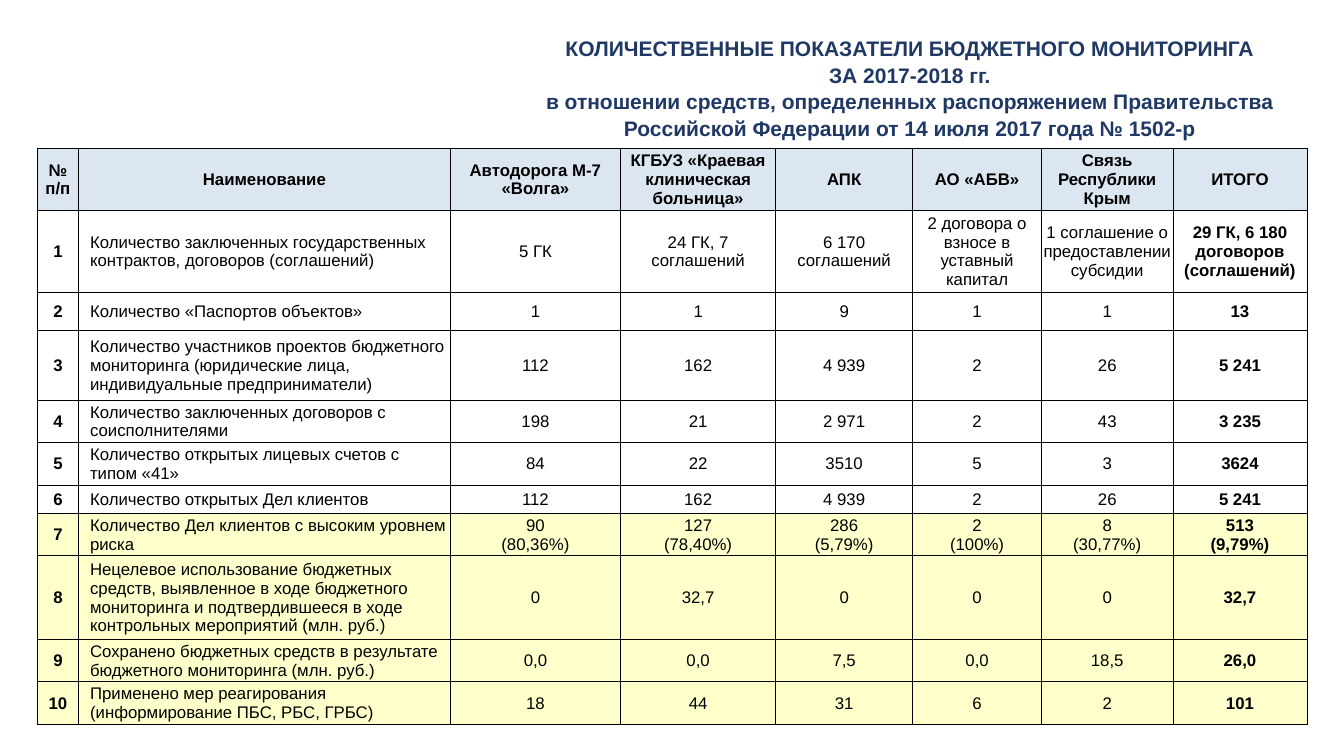
import pptx
import pptx.util
import pptx.dml.color
import pptx.enum.text
import pptx.oxml
import pptx.oxml.ns
from pptx.util import Cm, Pt

TITLE = [
    "КОЛИЧЕСТВЕННЫЕ ПОКАЗАТЕЛИ БЮДЖЕТНОГО МОНИТОРИНГА",
    "ЗА 2017-2018 гг.\vв отношении средств, определенных распоряжением Правительства "
    "Российской Федерации от 14 июля 2017 года № 1502-р",
]
HEADER = ("№ п/п", "Наименование", "Автодорога М-7 «Волга»",
          "КГБУЗ «Краевая клиническая больница»", "АПК", "АО «АБВ»",
          "Связь Республики Крым", "ИТОГО")
INDICATORS = [
    ("Количество заключенных государственных контрактов, договоров (соглашений)",
     "5 ГК", "24 ГК, 7 соглашений", "6 170 соглашений",
     "2 договора о взносе в уставный капитал",
     "1 соглашение о предоставлении субсидии",
     "29 ГК, 6 180 договоров (соглашений)"),
    ("Количество «Паспортов объектов»", "1", "1", "9", "1", "1", "13"),
    ("Количество участников проектов бюджетного мониторинга "
     "(юридические лица, индивидуальные предприниматели)",
     "112", "162", "4 939", "2", "26", "5 241"),
    ("Количество заключенных договоров с соисполнителями",
     "198", "21", "2 971", "2", "43", "3 235"),
    ("Количество открытых лицевых счетов с типом «41»",
     "84", "22", "3510", "5", "3", "3624"),
    ("Количество открытых Дел клиентов", "112", "162", "4 939", "2", "26", "5 241"),
    ("Количество Дел клиентов с высоким уровнем риска",
     "90\n(80,36%)", "127\n(78,40%)", "286\n(5,79%)", "2\n(100%)",
     "8\n(30,77%)", "513\n(9,79%)"),
    ("Нецелевое использование бюджетных средств, выявленное в ходе бюджетного "
     "мониторинга и подтвердившееся в ходе контрольных мероприятий (млн. руб.)",
     "0", "32,7", "0", "0", "0", "32,7"),
    ("Сохранено бюджетных средств в результате бюджетного мониторинга (млн. руб.)",
     "0,0", "0,0", "7,5", "0,0", "18,5", "26,0"),
    ("Применено мер реагирования (информирование ПБС, РБС, ГРБС)",
     "18", "44", "31", "6", "2", "101"),
]
COL_WIDTHS = (1.04, 9.37, 4.29, 3.91, 3.45, 3.25, 3.31, 3.38)
ROW_HEIGHTS = (1.57, 2.06, 0.97, 1.75, 1.07, 1.07, 0.71, 1.07, 2.11, 1.07, 1.07)
FIRST_RISK_ROW = 7
NAME_COL = 1
BOLD_COLS = (0, len(HEADER) - 1)
COLORS = {"title": "203864", "text": "000000", "border": "000000",
          "header": "DCE6F1", "plain": "FFFFFF", "risk": "FFFFCC"}
FONT = "Arial"


def rgb(name):
    return pptx.dml.color.RGBColor.from_string(COLORS[name])


def style(p, size, color, bold, align):
    p.alignment = align
    p.font.name = FONT
    p.font.size = Pt(size)
    p.font.bold = bold
    p.font.color.rgb = rgb(color)


def add_borders(cell):
    tcPr = cell._tc.get_or_add_tcPr()
    for i, side in enumerate(("lnL", "lnR", "lnT", "lnB")):
        tcPr.insert(i, pptx.oxml.parse_xml(
            f'<a:{side} {pptx.oxml.ns.nsdecls("a")} w="{Pt(0.5)}"><a:solidFill>'
            f'<a:srgbClr val="{COLORS["border"]}"/></a:solidFill></a:{side}>'))


def add_title(slide):
    sp = slide.shapes.title
    sp.left, sp.top, sp.width, sp.height = Cm(12.01), Cm(0.74), Cm(21.84), Cm(2.9)
    tf = sp.text_frame
    tf.word_wrap = True
    tf.auto_size = pptx.enum.text.MSO_AUTO_SIZE.NONE
    tf.vertical_anchor = pptx.enum.text.MSO_ANCHOR.TOP
    tf.margin_left = tf.margin_right = Cm(0.2)
    tf.margin_top = tf.margin_bottom = Cm(0.1)
    tf.text = "\n".join(TITLE)
    for p in tf.paragraphs:
        style(p, 15, "title", True, pptx.enum.text.PP_ALIGN.CENTER)
        p.line_spacing = 1.07
        p.space_before = Pt(0)


def add_indicator_table(slide):
    rows = [HEADER] + [(str(n), *row) for n, row in enumerate(INDICATORS, 1)]
    table = slide.shapes.add_table(
        len(rows), len(HEADER), Cm(0.94), Cm(3.73),
        Cm(sum(COL_WIDTHS)), Cm(sum(ROW_HEIGHTS))).table
    for column, width in zip(table.columns, COL_WIDTHS):
        column.width = Cm(width)
    for row, height in zip(table.rows, ROW_HEIGHTS):
        row.height = Cm(height)
    for r, values in enumerate(rows):
        fill = "header" if r == 0 else "risk" if r >= FIRST_RISK_ROW else "plain"
        for c, value in enumerate(values):
            is_name = r > 0 and c == NAME_COL
            cell = table.cell(r, c)
            cell.text = value
            cell.vertical_anchor = pptx.enum.text.MSO_ANCHOR.MIDDLE
            cell.margin_left = Cm(0.29 if is_name else 0.02)
            cell.margin_right = cell.margin_top = Cm(0.02)
            cell.margin_bottom = 0
            cell.fill.solid()
            cell.fill.fore_color.rgb = rgb(fill)
            add_borders(cell)
            align = pptx.enum.text.PP_ALIGN
            for p in cell.text_frame.paragraphs:
                style(p, 12, "text", r == 0 or c in BOLD_COLS,
                      align.LEFT if is_name else align.CENTER)


def main():
    prs = pptx.Presentation()
    prs.slide_width, prs.slide_height = Cm(33.87), Cm(19.05)
    slide = prs.slides.add_slide(prs.slide_layouts[5])
    add_title(slide)
    add_indicator_table(slide)
    prs.save("out.pptx")


if __name__ == "__main__":
    main()
